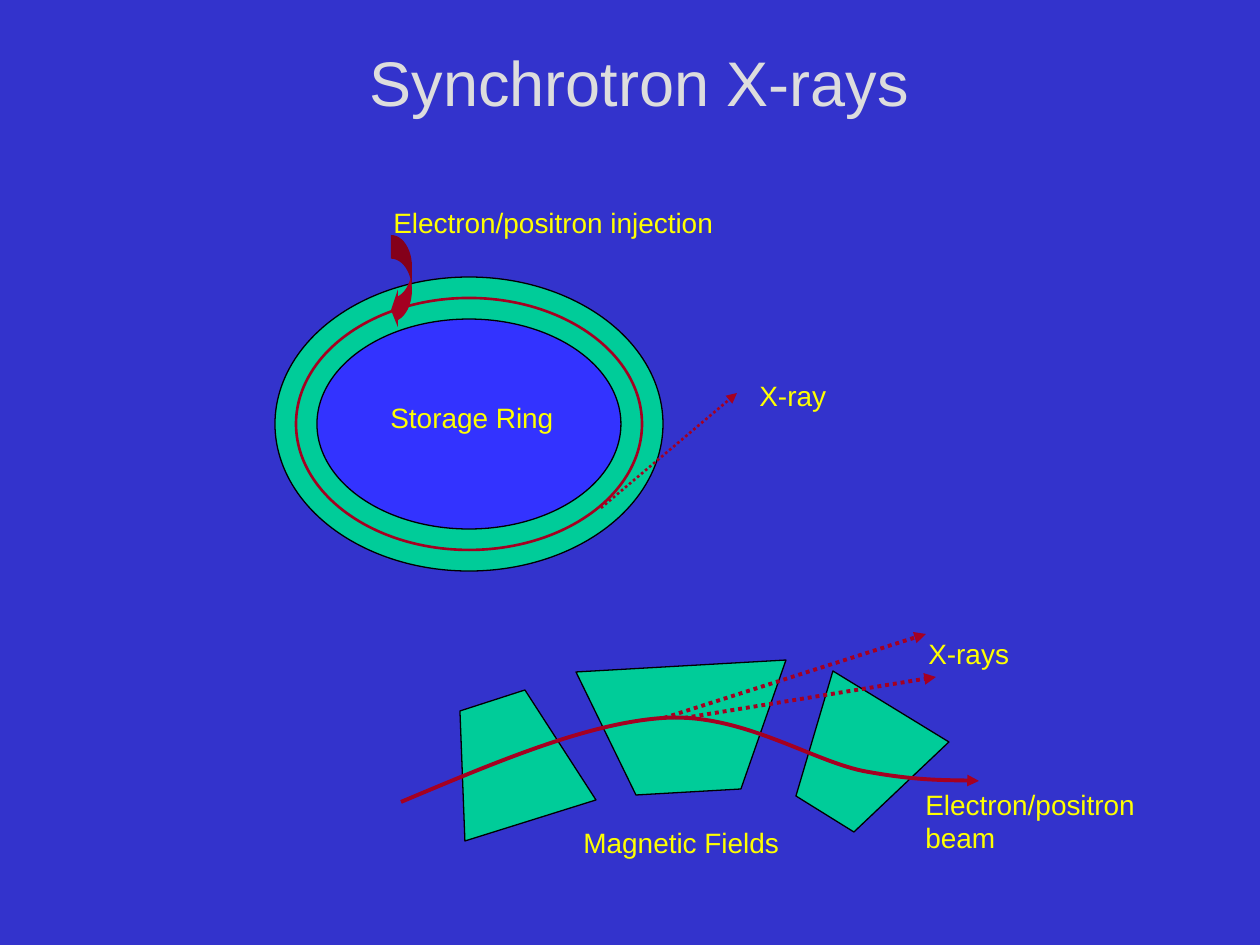
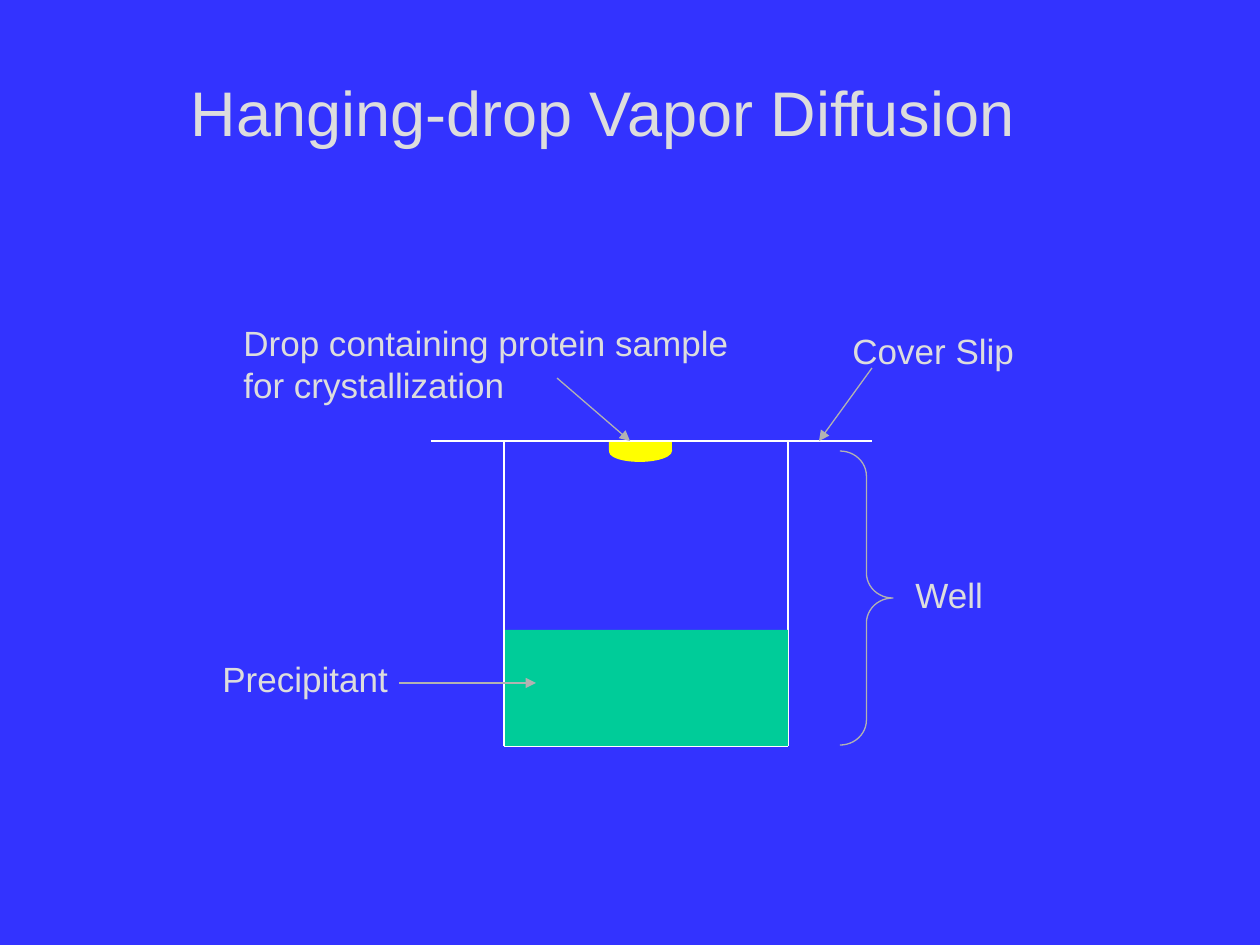
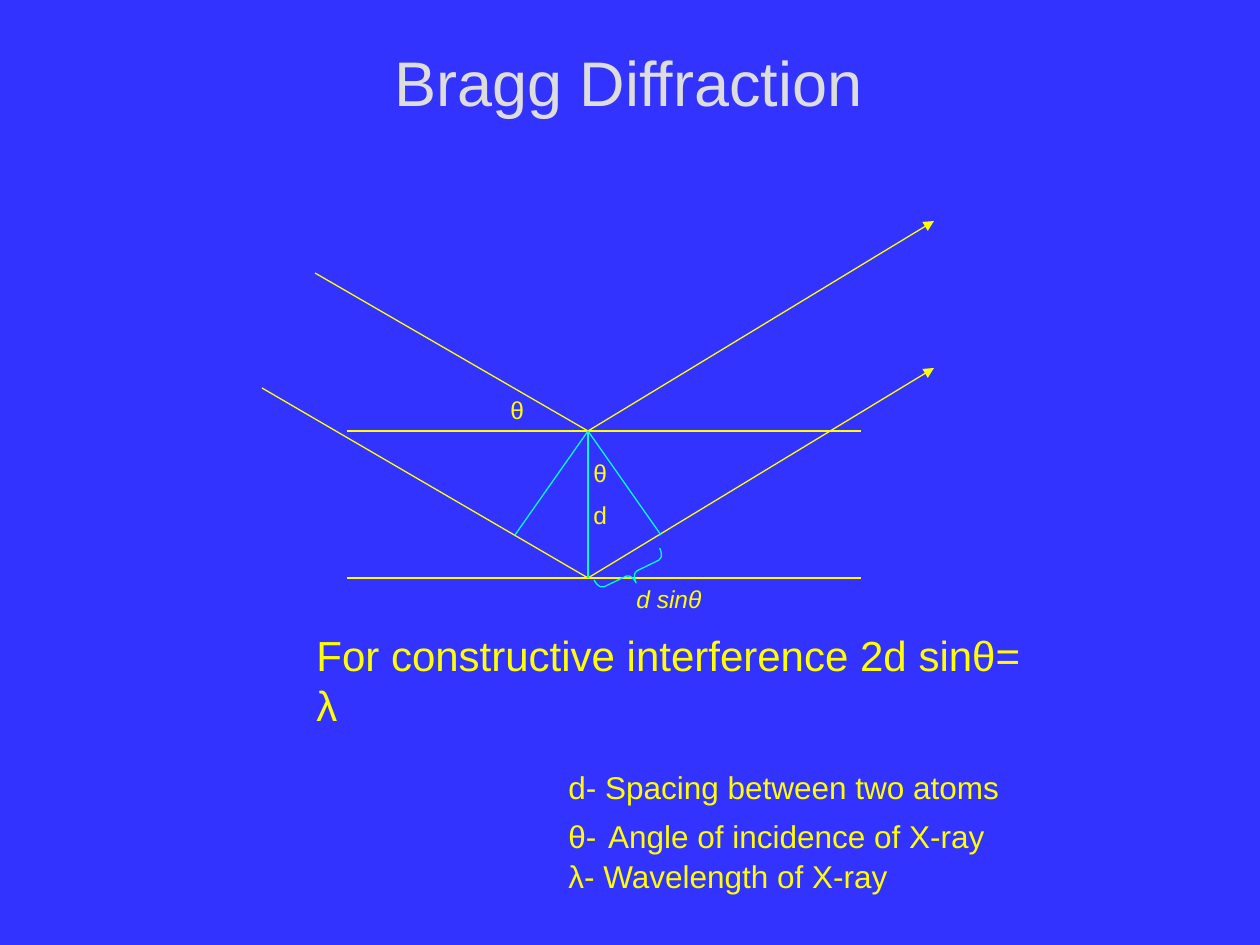
import lxml.etree
import pptx
import pptx.dml.color
import pptx.enum.dml
import pptx.enum.shapes
import pptx.enum.text
import pptx.oxml.ns
import pptx.util

RGBColor = pptx.dml.color.RGBColor
Shape = pptx.enum.shapes.MSO_SHAPE
Align = pptx.enum.text.PP_ALIGN
qn = pptx.oxml.ns.qn

INDIGO = RGBColor(0x33, 0x33, 0xCC)
BLUE = RGBColor(0x33, 0x33, 0xFF)
SILVER = RGBColor(0xDD, 0xDD, 0xDD)
GRAY = RGBColor(0xB2, 0xB2, 0xB2)
WHITE = RGBColor(0xFF, 0xFF, 0xFF)
BLACK = RGBColor(0x00, 0x00, 0x00)
YELLOW = RGBColor(0xFF, 0xFF, 0x00)
GREEN = RGBColor(0x00, 0xCC, 0x99)
AQUA = RGBColor(0x00, 0xFF, 0xCC)
CRIMSON = RGBColor(0xA5, 0x00, 0x21)

FONT = "Arial"
PX_PER_INCH = 126
SCALE = 914400 / PX_PER_INCH
THIN = 0.75


def px(*lengths):
    return [pptx.util.Emu(round(length * SCALE)) for length in lengths]


class Deck:
    def __init__(self):
        self.deck = pptx.Presentation()
        self.deck.slide_width, self.deck.slide_height = px(1260, 945)
        self.page = None

    def start_page(self, background, title, left, top, width, height, align=Align.CENTER):
        self.page = self.deck.slides.add_slide(self.deck.slide_layouts[5])
        self.page.background.fill.solid()
        self.page.background.fill.fore_color.rgb = background
        box = self.page.shapes.title
        box.left, box.top, box.width, box.height = px(left, top, width, height)
        frame = box.text_frame
        frame.text = title
        frame.word_wrap = True
        frame.auto_size = pptx.enum.text.MSO_AUTO_SIZE.NONE
        frame.vertical_anchor = pptx.enum.text.MSO_ANCHOR.TOP
        frame.paragraphs[0].alignment = align
        self.format_runs(frame.paragraphs[0], 36, SILVER)

    def format_runs(self, para, size, color, italic=False):
        for span in para.runs:
            span.font.name = FONT
            span.font.size = pptx.util.Pt(size)
            span.font.color.rgb = color
            span.font.italic = italic

    def label(self, text, left, top, width, size=16, color=YELLOW, wrap=False, lines=1, italic=False):
        height = round(lines * size * 2.1 + 13)
        box = self.page.shapes.add_textbox(*px(left, top, width, height))
        box.text_frame.text = text
        box.text_frame.word_wrap = wrap
        for para in box.text_frame.paragraphs:
            self.format_runs(para, size, color, italic)
        return box

    def indent(self, para, distance):
        properties = para._p.get_or_add_pPr()
        properties.set("marL", str(px(distance)[0]))
        properties.set("indent", "0")

    def paint(self, shape, fill=None, line=None, weight=THIN):
        shape.shadow.inherit = False
        if fill is None:
            shape.fill.background()
        else:
            shape.fill.solid()
            shape.fill.fore_color.rgb = fill
        if line is None:
            shape.line.fill.background()
        else:
            shape.line.color.rgb = line
            shape.line.width = pptx.util.Pt(weight)
        return shape

    def shape(self, kind, left, top, width, height, fill=None, line=None, weight=THIN,
              rotation=0, adjustments=()):
        shape = self.page.shapes.add_shape(kind, *px(left, top, width, height))
        shape.rotation = rotation
        for index, value in enumerate(adjustments):
            shape.adjustments[index] = value
        return self.paint(shape, fill, line, weight)

    def add_arrowhead(self, shape):
        outline = shape.element.spPr.find(qn("a:ln"))
        lxml.etree.SubElement(outline, qn("a:tailEnd"), type="triangle")

    def line(self, start, end, color, weight=THIN, arrow=False, dotted=False):
        straight = pptx.enum.shapes.MSO_CONNECTOR.STRAIGHT
        line = self.page.shapes.add_connector(straight, *px(*start, *end))
        line.line.color.rgb = color
        line.line.width = pptx.util.Pt(weight)
        if dotted:
            line.line.dash_style = pptx.enum.dml.MSO_LINE.ROUND_DOT
        if arrow:
            self.add_arrowhead(line)
        lxml.etree.SubElement(line.element.spPr, qn("a:effectLst"))

    def outline(self, points, closed):
        builder = self.page.shapes.build_freeform(*points[0], scale=SCALE)
        builder.add_line_segments(points[1:], close=closed)
        return builder.convert_to_shape()

    def polygon(self, points, fill, line):
        self.paint(self.outline(points, True), fill, line)

    def curved_arrow(self, points, color, weight):
        curve = self.paint(self.outline(points, False), None, color, weight)
        route = next(curve.element.iter(qn("a:path")))
        segments = route.findall(qn("a:lnTo"))
        for first in range(0, len(segments), 3):
            bezier = lxml.etree.SubElement(route, qn("a:cubicBezTo"))
            for segment in segments[first:first + 3]:
                bezier.append(segment[0])
                route.remove(segment)
        self.add_arrowhead(curve)


def build_synchrotron(deck):
    deck.start_page(INDIGO, "Synchrotron X-rays", 260, 37, 759, 88)
    deck.label("Electron/positron injection", 381, 199, 352)
    rings = [(GREEN, BLACK, THIN), (None, CRIMSON, 1.5), (BLUE, BLACK, THIN)]
    for index, (fill, line, weight) in enumerate(rings):
        inset = 21 * index
        deck.shape(Shape.OVAL, 275 + inset, 277 + inset, 388 - 2 * inset, 294 - 2 * inset,
                   fill, line, weight)
    deck.label("Storage Ring", 378, 394, 196)
    deck.shape(Shape.CURVED_LEFT_ARROW, 391, 235, 21, 94, CRIMSON,
               adjustments=(1.13, 1.8, 0.33))
    deck.line((601, 508), (737, 393), CRIMSON, 1.5, arrow=True, dotted=True)
    deck.label("X-ray", 747, 372, 100)

    magnets = [
        [(596, 800), (525, 690), (460, 711), (465, 841)],
        [(576, 672), (636, 795), (741, 789), (786, 660)],
        [(833, 671), (796, 796), (854, 832), (949, 742)],
    ]
    for magnet in magnets:
        deck.polygon(magnet, GREEN, BLACK)
    beam = [(401, 802), (494, 763), (587, 723), (664, 718), (741, 713),
            (810, 760), (863, 771), (916, 781), (959, 780), (979, 781)]
    deck.curved_arrow(beam, CRIMSON, 2.25)
    for start, end in [((664, 718), (926, 634)), ((684, 718), (936, 677))]:
        deck.line(start, end, CRIMSON, 2.25, arrow=True, dotted=True)
    deck.label("X-rays", 916, 630, 112)
    deck.label("Magnetic Fields", 571, 819, 236)
    deck.label("Electron/positron\nbeam", 913, 781, 250, lines=2)


def build_hanging_drop(deck):
    deck.start_page(BLUE, "Hanging-drop Vapor Diffusion", 178, 67, 892, 164, Align.LEFT)
    left, right, top, bottom = 504, 788, 441, 746
    deck.line((left, bottom), (right, bottom), WHITE)
    deck.line((right, top), (right, bottom), WHITE)
    deck.shape(Shape.FLOWCHART_DELAY, 630, 420, 21, 63, YELLOW, rotation=89.3)
    deck.shape(Shape.RECTANGLE, left, 630, right - left, bottom - 630, GREEN)
    deck.line((left, top), (left, bottom), WHITE)
    deck.line((431, top), (872, top), WHITE)

    deck.label("Precipitant", 210, 651, 200, 20, SILVER)
    deck.label("Drop containing protein sample for crystallization", 231, 315, 514, 20, SILVER,
               wrap=True, lines=2)
    deck.label("Cover Slip", 840, 323, 200, 20, SILVER)
    deck.label("Well", 903, 567, 100, 20, SILVER)
    pointers = [((557, 378), (630, top)), ((399, 683), (536, 683)), ((872, 368), (819, top))]
    for start, end in pointers:
        deck.line(start, end, GRAY, arrow=True)
    deck.shape(Shape.RIGHT_BRACE, 840, 451, 53, 294, line=GRAY, adjustments=(0.47, 0.5))


def build_bragg(deck):
    deck.start_page(BLUE, "Bragg Diffraction", 249, 37, 759, 88)
    upper, lower = (588, 431), (588, 578)
    for atom, source, target in [(upper, (315, 273), (934, 221)), (lower, (262, 388), (934, 368))]:
        deck.line((347, atom[1]), (861, atom[1]), YELLOW)
        deck.line(source, atom, YELLOW)
        deck.line(atom, target, YELLOW, arrow=True)
    for foot in [lower, (661, 535), (515, 535)]:
        deck.line(upper, foot, AQUA)

    deck.label("d", 581, 494, 45, 14)
    deck.label("θ", 498, 389, 45, 14)
    deck.label("θ", 581, 452, 45, 14)
    deck.shape(Shape.RIGHT_BRACE, 621, 537, 21, 73, line=AQUA, rotation=64,
               adjustments=(0.29, 0.5))
    deck.label("d sinθ", 624, 578, 112, 14, wrap=True, italic=True)

    box = deck.label("For constructive interference 2d sinθ= λ\nd- Spacing between two atoms\nθ-\n"
                     "λ- Wavelength of X-ray", 304, 623, 760, 18, wrap=True, lines=6)
    condition, spacing, angle, wavelength = box.text_frame.paragraphs
    deck.format_runs(condition, 24, YELLOW)
    spacing.space_before = pptx.util.Pt(22)
    for text in (" ", "Angle of incidence of X-ray"):
        angle.add_run().text = text
    deck.format_runs(angle, 18, YELLOW)
    angle.runs[1].font.size = pptx.util.Pt(24)
    for para in (spacing, angle, wavelength):
        deck.indent(para, 252)


def main():
    deck = Deck()
    build_synchrotron(deck)
    build_hanging_drop(deck)
    build_bragg(deck)
    deck.deck.save("out.pptx")


if __name__ == "__main__":
    main()
